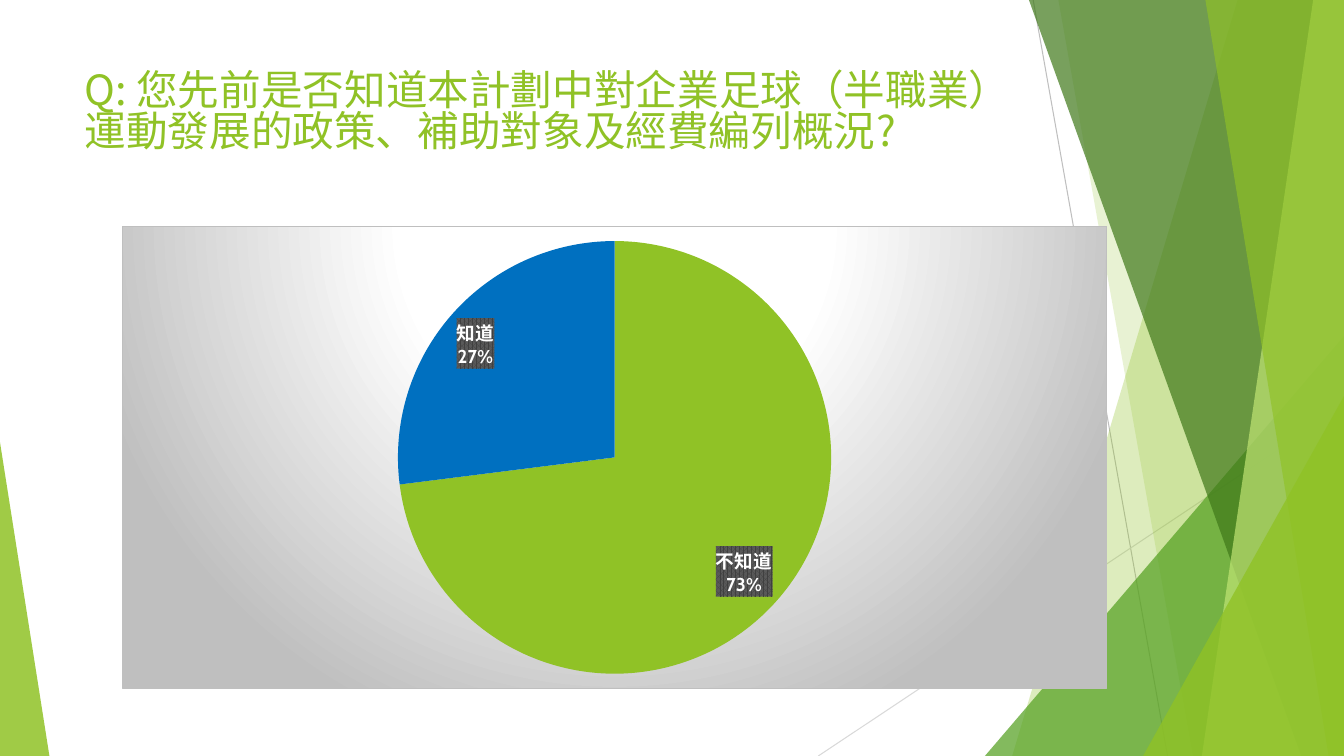
from dataclasses import dataclass

import lxml.etree
import pptx
import pptx.chart.data
import pptx.dml.color
import pptx.enum.chart
import pptx.enum.shapes
import pptx.enum.text
import pptx.oxml
import pptx.oxml.ns
import pptx.util

Pt = pptx.util.Pt
RGBColor = pptx.dml.color.RGBColor
qn = pptx.oxml.ns.qn

WHITE = RGBColor(0xFF, 0xFF, 0xFF)
BLACK = RGBColor(0x00, 0x00, 0x00)
LIME = RGBColor(0x90, 0xC2, 0x26)
PALE_LIME = RGBColor(0xC0, 0xE4, 0x74)
GREEN = RGBColor(0x54, 0xA0, 0x21)
DARK_GREEN = RGBColor(0x3F, 0x78, 0x19)
BLUE = RGBColor(0x00, 0x70, 0xC0)
GRAY = RGBColor(0xBF, 0xBF, 0xBF)
LIGHT_GRAY = RGBColor(0xD9, 0xD9, 0xD9)
LABEL_FRONT = RGBColor(0x40, 0x40, 0x40)
LABEL_BACK = RGBColor(0x59, 0x59, 0x59)

WIDTH = 960
HEIGHT = 540
LATIN_FONT = "Cabin"
TITLE_FONT = "Noto Sans CJK SC"
NAMESPACES = (
    'xmlns:c="http://schemas.openxmlformats.org/drawingml/2006/chart" '
    'xmlns:a="http://schemas.openxmlformats.org/drawingml/2006/main"'
)


@dataclass(frozen=True)
class Ray:
    start: tuple[float, float]
    end: tuple[float, float]
    color: RGBColor


@dataclass(frozen=True)
class Band:
    top_left: float
    bottom_left: float
    color: RGBColor
    opacity: int


@dataclass(frozen=True)
class Corner:
    left: float
    top: float
    width: float
    peak: float
    color: RGBColor
    opacity: int


@dataclass(frozen=True)
class Answer:
    name: str
    percent: int
    color: RGBColor


DECORATIONS = (
    Ray((738, 0), (834, 540), GRAY),
    Ray((960, 290), (584.5, 540), LIGHT_GRAY),
    Band(884, 723, LIME, 30),
    Band(756, 852, LIME, 20),
    Corner(703.5, 240, 256.5, 1, GREEN, 72),
    Band(735, 929.5, DARK_GREEN, 70),
    Band(938, 858.5, PALE_LIME, 70),
    Band(861, 949, LIME, 65),
    Corner(816.5, 283, 143.5, 1, LIME, 80),
    Corner(0, 316, 35.3, 0, LIME, 85),
)
ANSWERS = (Answer("不知道", 73, LIME), Answer("知道", 27, BLUE))


def paint(shape, color: RGBColor, opacity: int) -> None:
    shape.shadow.inherit = False
    shape.line.fill.background()
    shape.fill.solid()
    shape.fill.fore_color.rgb = color
    color_element = next(shape.element.iter(qn("a:srgbClr")))
    lxml.etree.SubElement(color_element, qn("a:alpha"), val=str(opacity * 1000))


def draw_ray(slide, ray: Ray) -> None:
    connector = slide.shapes.add_connector(
        pptx.enum.shapes.MSO_CONNECTOR.STRAIGHT,
        *(Pt(value) for value in ray.start + ray.end),
    )
    connector.line.color.rgb = ray.color
    connector.line.width = Pt(0.75)
    properties = connector.element.find(qn("p:spPr"))
    lxml.etree.SubElement(properties, qn("a:effectLst"))


def draw_band(slide, band: Band) -> None:
    builder = slide.shapes.build_freeform(Pt(band.top_left), 0)
    corners = ((WIDTH, 0), (WIDTH, HEIGHT), (band.bottom_left, HEIGHT))
    builder.add_line_segments([(Pt(x), Pt(y)) for x, y in corners], close=True)
    paint(builder.convert_to_shape(), band.color, band.opacity)


def draw_corner(slide, corner: Corner) -> None:
    triangle = slide.shapes.add_shape(
        pptx.enum.shapes.MSO_SHAPE.ISOSCELES_TRIANGLE,
        Pt(corner.left), Pt(corner.top),
        Pt(corner.width), Pt(HEIGHT - corner.top),
    )
    triangle.adjustments[0] = corner.peak
    paint(triangle, corner.color, corner.opacity)


def add_text(slide, text: str, *, left: float, top: float, width: float,
             height: float, size: float, font: str, color: RGBColor,
             line_spacing: float) -> None:
    frame = slide.shapes.add_textbox(Pt(left), Pt(top), Pt(width), Pt(height)).text_frame
    frame.word_wrap = True
    frame.vertical_anchor = pptx.enum.text.MSO_ANCHOR.TOP
    paragraph = frame.paragraphs[0]
    paragraph.line_spacing = line_spacing
    run = paragraph.add_run()
    run.text = text
    run.font.size = Pt(size)
    run.font.name = font
    run.font.color.rgb = color
    latin = next(run.font._element.iter(qn("a:latin")))
    latin.addnext(pptx.oxml.parse_xml(f'<a:ea {NAMESPACES} typeface="{font}"/>'))


def format_font(font, size: float, color: RGBColor, bold: bool) -> None:
    font.name = LATIN_FONT
    font.size = Pt(size)
    font.color.rgb = color
    font.bold = bold


def style_chart_area(chart) -> None:
    stops = "".join(
        f'<a:gs pos="{position * 1000}"><a:srgbClr val="{color}"/></a:gs>'
        for position, color in ((0, WHITE), (39, WHITE), (100, GRAY))
    )
    area = pptx.oxml.parse_xml(
        f'<c:spPr {NAMESPACES}><a:gradFill><a:gsLst>{stops}</a:gsLst>'
        '<a:path path="circle"><a:fillToRect l="50000" t="-80000" r="50000" b="180000"/>'
        f'</a:path></a:gradFill><a:ln w="9525"><a:solidFill><a:srgbClr val="{GRAY}"/>'
        '</a:solidFill></a:ln></c:spPr>'
    )
    chart.element.find(qn("c:chart")).addnext(area)
    plot_area = next(chart.element.iter(qn("c:plotArea")))
    for old_layout in plot_area.findall(qn("c:layout")):
        plot_area.remove(old_layout)
    bounds = "".join(
        f'<c:{key} val="{value}"/>'
        for key, value in (("x", 0.28), ("y", 0.03), ("w", 0.44), ("h", 0.94))
    )
    plot_area.insert(0, pptx.oxml.parse_xml(
        f'<c:layout {NAMESPACES}><c:manualLayout><c:layoutTarget val="inner"/>'
        f'<c:xMode val="edge"/><c:yMode val="edge"/>{bounds}</c:manualLayout></c:layout>'
    ))


def style_labels(chart, series) -> None:
    labels = series.data_labels
    format_font(labels.font, 13.3, WHITE, True)
    labels.show_category_name = True
    labels.show_percentage = True
    labels.show_value = False
    labels.position = pptx.enum.chart.XL_LABEL_POSITION.INSIDE_END
    element = next(chart.element.iter(qn("c:dLbls")))
    element.find(qn("c:txPr")).addprevious(pptx.oxml.parse_xml(
        f'<c:spPr {NAMESPACES}><a:pattFill prst="pct75">'
        f'<a:fgClr><a:srgbClr val="{LABEL_FRONT}"/></a:fgClr>'
        f'<a:bgClr><a:srgbClr val="{LABEL_BACK}"/></a:bgClr></a:pattFill></c:spPr>'
    ))
    element.find(qn("c:showBubbleSize")).addnext(
        pptx.oxml.parse_xml(f'<c:separator {NAMESPACES}>\n</c:separator>')
    )


def add_answer_chart(slide) -> None:
    data = pptx.chart.data.CategoryChartData()
    data.categories = [answer.name for answer in ANSWERS]
    data.add_series("Series 1", [answer.percent for answer in ANSWERS])
    chart = slide.shapes.add_chart(
        pptx.enum.chart.XL_CHART_TYPE.PIE, Pt(87), Pt(161.5), Pt(704), Pt(330.5), data
    ).chart
    chart.has_title = False
    chart.has_legend = False
    format_font(chart.font, 10, BLACK, False)
    plot = chart.plots[0]
    plot.vary_by_categories = True
    series = plot.series[0]
    for index, answer in enumerate(ANSWERS):
        fill = series.points[index].format.fill
        fill.solid()
        fill.fore_color.rgb = answer.color
    style_labels(chart, series)
    style_chart_area(chart)


def main() -> None:
    presentation = pptx.Presentation()
    presentation.slide_width = Pt(WIDTH)
    presentation.slide_height = Pt(HEIGHT)
    slide = presentation.slides.add_slide(presentation.slide_layouts[6])
    painters = {Ray: draw_ray, Band: draw_band, Corner: draw_corner}
    for decoration in DECORATIONS:
        painters[type(decoration)](slide, decoration)
    add_text(slide, "Q: 您先前是否知道本計劃中對企業足球（半職業）運動發展的政策、補助對象及經費編列概況?",
             left=53.3, top=48, width=677, height=104, size=29.7,
             font=TITLE_FONT, color=LIME, line_spacing=0.83)
    add_answer_chart(slide)
    presentation.save("out.pptx")


if __name__ == "__main__":
    main()
